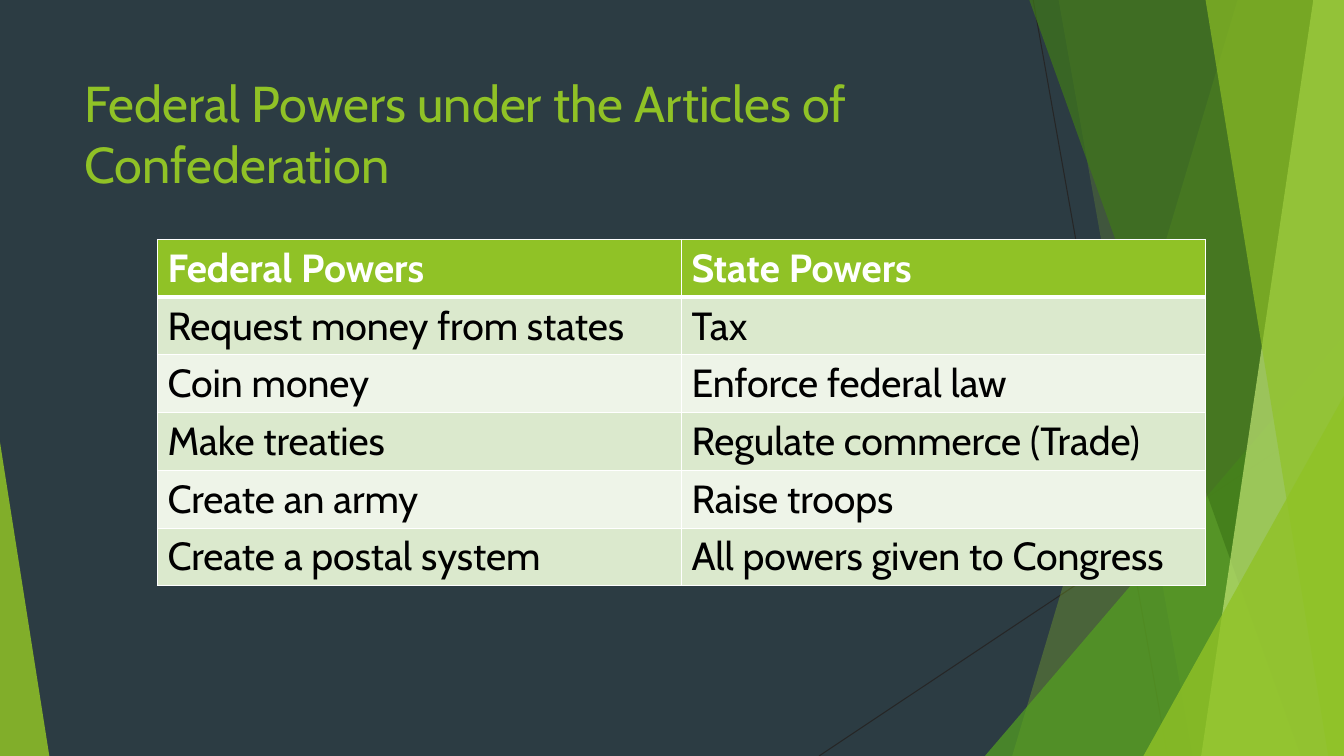
from dataclasses import dataclass

from lxml import etree
from pptx import Presentation
from pptx.dml.color import RGBColor
from pptx.enum.shapes import MSO_CONNECTOR, MSO_SHAPE
from pptx.enum.text import MSO_ANCHOR
from pptx.oxml.ns import qn
from pptx.util import Emu, Pt

STRAIGHT = MSO_CONNECTOR.STRAIGHT
TRIANGLE = MSO_SHAPE.ISOSCELES_TRIANGLE
TOP = MSO_ANCHOR.TOP

EMU_PER_PX = 9525
SLIDE_W, SLIDE_H = 1280, 720


@dataclass(frozen=True)
class Theme:
    font: str = "Cabin"
    title_size: int = 36
    table_size: int = 28
    background: str = "2C3C43"
    green: str = "90C226"
    leaf: str = "54A021"
    forest: str = "3F7819"
    lime: str = "C0E474"
    hairline: str = "262626"
    white: str = "FFFFFF"
    black: str = "000000"
    bands: tuple = ("DBE9CD", "EEF4E8")


THEME = Theme()

TITLE = "Federal Powers under the Articles of Confederation"
POWERS = [
    ("Federal Powers", "State Powers"),
    ("Request money from states", "Tax"),
    ("Coin money", "Enforce federal law"),
    ("Make treaties", "Regulate commerce (Trade)"),
    ("Create an army", "Raise troops"),
    ("Create a postal system", "All powers given to Congress"),
]


def px(length):
    return Emu(length * EMU_PER_PX)


def rgb(color):
    return RGBColor.from_string(color)


def write_text(frame, text, *, size, color, bold=False):
    frame.word_wrap = True
    run = frame.paragraphs[0].add_run()
    run.text = text
    run.font.name = THEME.font
    run.font.size = Pt(size)
    run.font.bold = bold
    run.font.color.rgb = rgb(color)


def paint(facet, color, opacity):
    """Fill a facet with a translucent colour and no outline."""
    facet.shadow.inherit = False
    facet.line.fill.background()
    facet.fill.solid()
    facet.fill.fore_color.rgb = rgb(color)
    tint = facet.fill._xPr.find(".//" + qn("a:srgbClr"))
    etree.SubElement(tint, qn("a:alpha"), val=str(opacity * 1000))


def add_hairline(slide, x1, y1, x2, y2):
    hairline = slide.shapes.add_connector(STRAIGHT, px(x1), px(y1), px(x2), px(y2))
    hairline.line.color.rgb = rgb(THEME.hairline)
    hairline.line.width = Pt(0.75)
    etree.SubElement(hairline._element.spPr, qn("a:effectLst"))


def add_blade(slide, top_x, bottom_x, color, opacity):
    """Full-height facet from a slanted left edge to the slide's right edge."""
    builder = slide.shapes.build_freeform(top_x, -1, scale=EMU_PER_PX)
    builder.add_line_segments([(SLIDE_W, -1), (SLIDE_W, SLIDE_H), (bottom_x, SLIDE_H)])
    paint(builder.convert_to_shape(), color, opacity)


def add_corner(slide, left, top, width, apex, color, opacity):
    """Triangle standing on the slide's bottom edge."""
    corner = slide.shapes.add_shape(
        TRIANGLE, px(left), px(top), px(width), px(SLIDE_H - top))
    corner.adjustments[0] = apex
    paint(corner, color, opacity)


def add_title(slide, text, left, top, width, height):
    title = slide.shapes.add_textbox(px(left), px(top), px(width), px(height))
    title.text_frame.vertical_anchor = TOP
    write_text(title.text_frame, text, size=THEME.title_size, color=THEME.green)


def set_borders(cell, top, bottom):
    """White rules round a cell; they must precede its fill in the XML."""
    widths = {"a:lnL": 1, "a:lnR": 1, "a:lnT": top, "a:lnB": bottom}
    properties = cell._tc.get_or_add_tcPr()
    for position, (side, width) in enumerate(widths.items()):
        rule = etree.Element(qn(side), w=str(Pt(width)))
        solid = etree.SubElement(rule, qn("a:solidFill"))
        etree.SubElement(solid, qn("a:srgbClr"), val=THEME.white)
        properties.insert(position, rule)


def add_powers_table(slide, rows, left, top, column_width, row_height):
    columns = len(rows[0])
    powers = slide.shapes.add_table(
        len(rows), columns, px(left), px(top),
        px(column_width * columns), px(row_height * len(rows))).table
    powers.horz_banding = False
    for column in powers.columns:
        column.width = px(column_width)
    for r, row in enumerate(rows):
        header = r == 0
        powers.rows[r].height = px(row_height)
        for c, power in enumerate(row):
            cell = powers.cell(r, c)
            cell.fill.solid()
            cell.fill.fore_color.rgb = rgb(
                THEME.green if header else THEME.bands[(r - 1) % 2])
            set_borders(cell, top=3 if r == 1 else 1, bottom=3 if header else 1)
            write_text(cell.text_frame, power, size=THEME.table_size, bold=header,
                       color=THEME.white if header else THEME.black)


def main():
    deck = Presentation()
    deck.slide_width, deck.slide_height = px(SLIDE_W), px(SLIDE_H)
    slide = deck.slides.add_slide(deck.slide_layouts[6])
    slide.background.fill.solid()
    slide.background.fill.fore_color.rgb = rgb(THEME.background)

    # Faceted decoration, back to front
    add_hairline(slide, 984, 0, 1112, SLIDE_H)
    add_hairline(slide, SLIDE_W, 387, 780, SLIDE_H)
    add_blade(slide, 1179, 964, THEME.green, 30)
    add_blade(slide, 1008, 1136, THEME.green, 20)
    add_corner(slide, 938, 320, 342, 1, THEME.leaf, 72)
    add_blade(slide, 980, 1239, THEME.forest, 70)
    add_blade(slide, 1251, 1144, THEME.lime, 70)
    add_blade(slide, 1148, 1265, THEME.green, 65)
    add_corner(slide, 1089, 377, 191, 1, THEME.green, 80)
    add_corner(slide, 0, 421, 47, 0, THEME.green, 85)

    # Title and table
    add_title(slide, TITLE, 71, 64, 902, 138)
    add_powers_table(slide, POWERS, 150, 228, column_width=499, row_height=55)

    deck.save("out.pptx")


if __name__ == "__main__":
    main()
